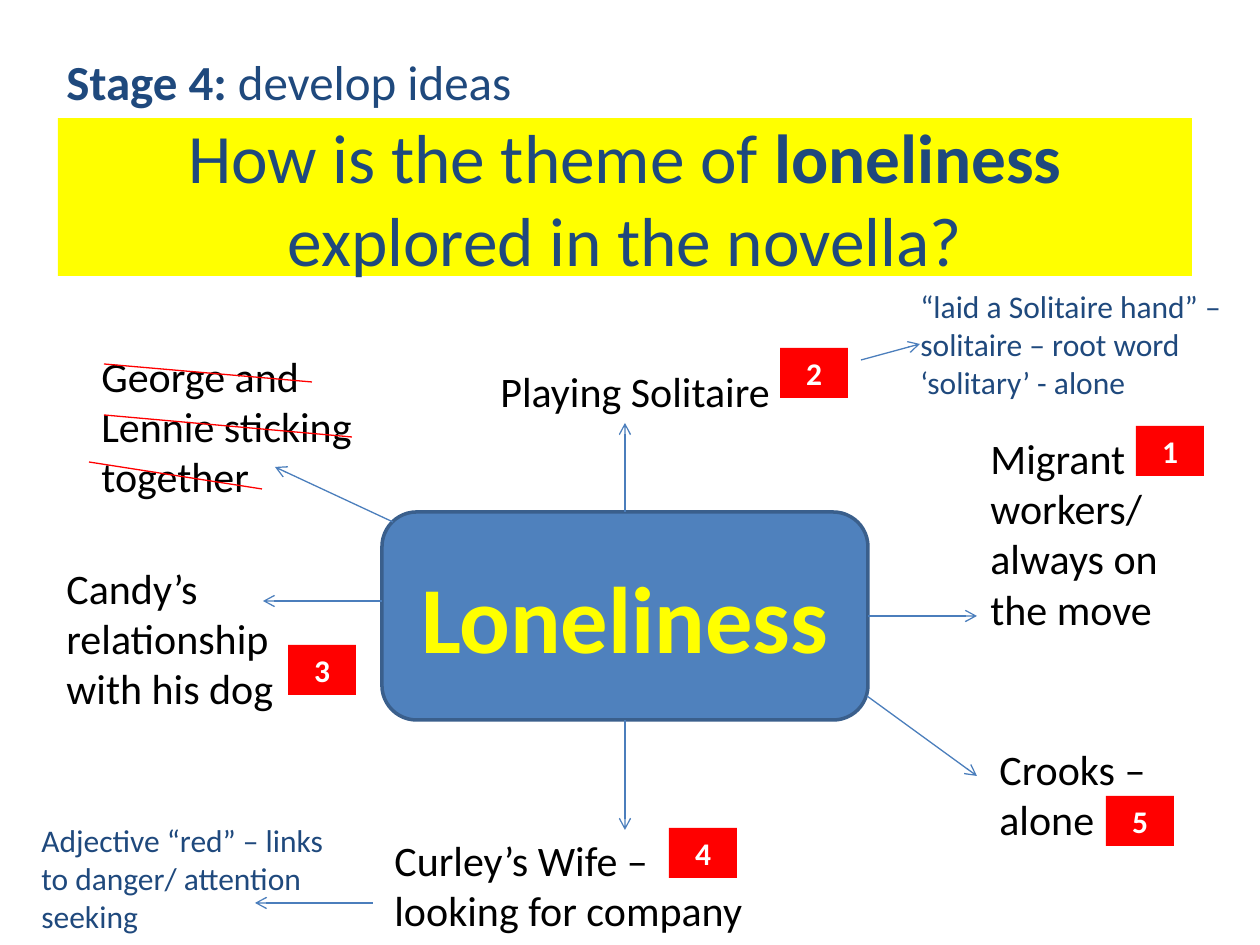
"""Build a mind-map slide on the theme of loneliness."""
from pptx import Presentation, util as u
from pptx.dml.color import RGBColor
from pptx.enum import shapes as sh, text as tx
from pptx.oxml import parse_xml
from pptx.oxml.ns import nsdecls

PX = 914400 // 126
NAVY = RGBColor(0x1F, 0x49, 0x7D)
BLUE = RGBColor(0x4F, 0x81, 0xBD)
EDGE = RGBColor(0x3A, 0x5F, 0x8C)
LINK = RGBColor(0x4B, 0x7E, 0xBC)
YELLOW = RGBColor(0xFF, 0xFF, 0)
RED = RGBColor(0xFF, 0, 0)
BLACK = RGBColor(0, 0, 0)
WHITE = RGBColor(0xFF, 0xFF, 0xFF)

TITLE = [("How is the theme of ", False), ("loneliness ", True),
         ("explored in the novella?", False)]
STAGE = [("Stage 4:", True), (" develop ideas", False)]
HUB = (382, 512, 486, 208)
IDEAS = [
    ("Playing Solitaire", (488, 359, 328, 63)),
    ("Migrant workers/ always on the move", (978, 426, 258, 217)),
    ("Curley’s Wife – looking for company", (382, 828, 398, 115)),
    ("Candy’s relationship with his dog", (54, 556, 258, 165)),
    ("George and Lennie sticking together", (89, 344, 328, 165)),
    ("Crooks – alone", (987, 737, 273, 115)),
]
NOTES = [
    ("“laid a Solitaire hand” – solitaire – root word ‘solitary’ - alone",
     (908, 281, 328, 127)),
    ("Adjective “red” – links to danger/ attention seeking",
     (29, 815, 328, 127)),
]
BADGES = [(1136, 426), (780, 348), (288, 645), (669, 828), (1106, 796)]
BADGE = (68, 50)
JOINED = [(0, (625, 512), (625, 423)), (2, (625, 720), (625, 830)),
          (3, (868, 616), (977, 616))]
ARROWS = [((382, 601), (263, 601)), ((393, 522), (275, 467)),
          ((867, 696), (977, 776)), ((861, 360), (920, 344)),
          ((373, 903), (255, 903))]
STRIKES = [((104, 364), (312, 382)), ((104, 415), (352, 437)),
           ((89, 462), (262, 489))]


def px(vals):
    return [v * PX for v in vals]


def write(shape, runs, size, color, bold=False, align=tx.PP_ALIGN.LEFT,
          anchor=tx.MSO_ANCHOR.TOP, wrap=True):
    frame = shape.text_frame
    frame.word_wrap = wrap
    frame.auto_size = tx.MSO_AUTO_SIZE.NONE
    frame.vertical_anchor = anchor
    par = frame.paragraphs[0]
    par.alignment = align
    for words, heavy in [(runs, bold)] if isinstance(runs, str) else runs:
        run = par.add_run()
        run.text = words
        font = run.font
        font.name, font.size, font.bold = "Calibri", u.Pt(size), heavy
        font.color.rgb = color


def label(slide, runs, box, size, color, **look):
    write(slide.shapes.add_textbox(*px(box)), runs, size, color, **look)


def block(slide, kind, box, fill, words, size, color, edge=None):
    shape = slide.shapes.add_shape(kind, *px(box))
    shape.shadow.inherit = False
    shape.fill.solid()
    shape.fill.fore_color.rgb = fill
    if edge:
        shape.line.color.rgb = edge
        shape.line.width = u.Pt(2)
    else:
        shape.line.fill.background()
    write(shape, words, size, color, bold=True, align=tx.PP_ALIGN.CENTER,
          anchor=tx.MSO_ANCHOR.MIDDLE)
    return shape


def link(slide, start, end, color=LINK, arrow=True):
    line = slide.shapes.add_connector(sh.MSO_CONNECTOR.STRAIGHT,
                                      *px(start + end))
    line.line.color.rgb = color
    line.line.width = u.Pt(0.75)
    if arrow:
        line.line._get_or_add_ln().append(
            parse_xml(f'<a:tailEnd {nsdecls("a")} type="arrow"/>'))
    line._element.spPr.append(parse_xml(f'<a:effectLst {nsdecls("a")}/>'))
    return line


def main():
    deck = Presentation()
    deck.slide_width, deck.slide_height = px((1260, 945))
    slide = deck.slides.add_slide(deck.slide_layouts[5])

    title = slide.shapes.title
    title.left, title.top, title.width, title.height = px((58, 118, 1134, 158))
    title.fill.solid()
    title.fill.fore_color.rgb = YELLOW
    write(title, TITLE, 39.6, NAVY, align=tx.PP_ALIGN.CENTER,
          anchor=tx.MSO_ANCHOR.MIDDLE)
    label(slide, STAGE, (54, 45, 475, 72), 28, NAVY, wrap=False)

    hub = block(slide, sh.MSO_SHAPE.FLOWCHART_ALTERNATE_PROCESS, HUB, BLUE,
                "Loneliness", 54, YELLOW, edge=EDGE)
    for side, start, end in JOINED:
        link(slide, start, end).begin_connect(hub, side)
    for start, end in ARROWS:
        link(slide, start, end)
    for words, box in IDEAS:
        label(slide, words, box, 24, BLACK)
    for words, box in NOTES:
        label(slide, words, box, 18, NAVY)
    for start, end in STRIKES:
        link(slide, start, end, color=RED, arrow=False)
    for num, spot in enumerate(BADGES, 1):
        block(slide, sh.MSO_SHAPE.RECTANGLE, spot + BADGE, RED, str(num),
              18, WHITE)
    deck.save("out.pptx")


if __name__ == "__main__":
    main()
